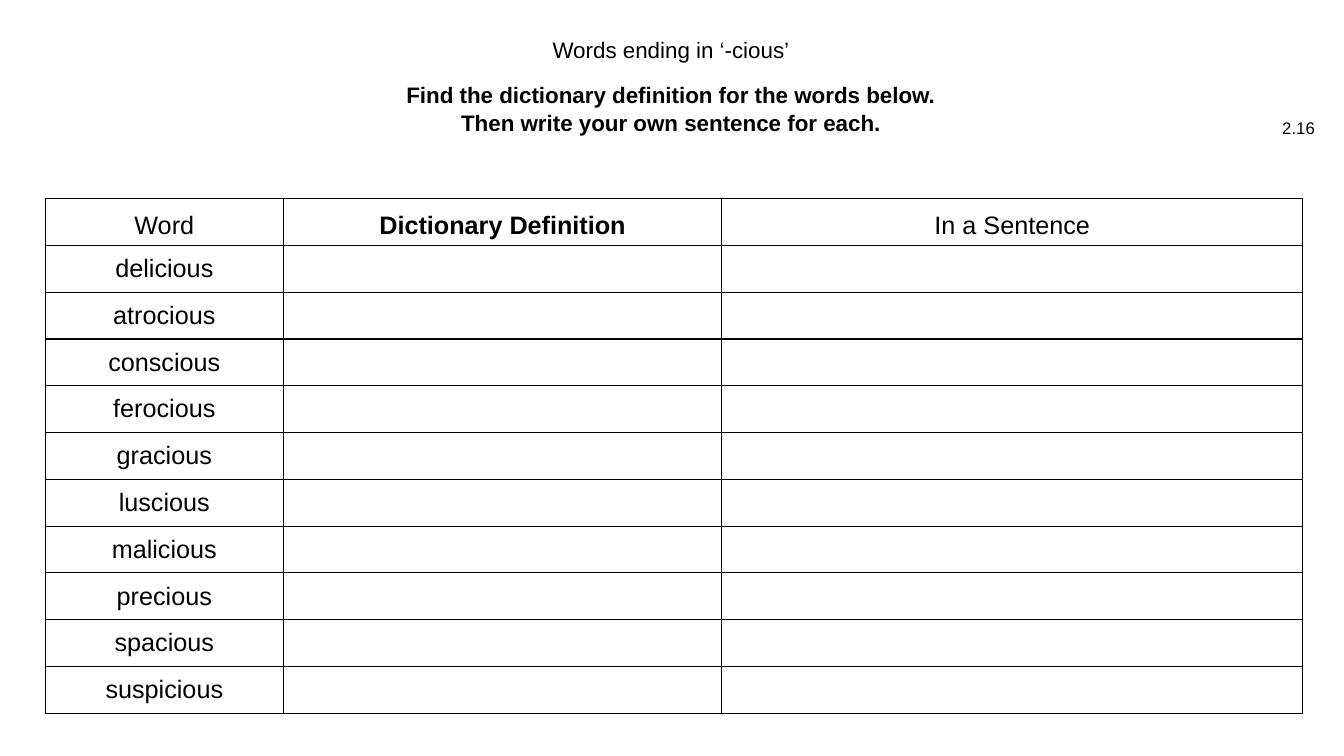
from lxml import etree
from pptx import Presentation
from pptx.dml.color import RGBColor
from pptx.enum.text import MSO_ANCHOR, PP_ALIGN
from pptx.oxml.ns import qn
from pptx.util import Inches, Pt

TOP, MIDDLE, BOTTOM = MSO_ANCHOR.TOP, MSO_ANCHOR.MIDDLE, MSO_ANCHOR.BOTTOM
CENTER, RIGHT = PP_ALIGN.CENTER, PP_ALIGN.RIGHT

HEADINGS = [
    {"lines": ["Find the dictionary definition for the words below.",
               "Then write your own sentence for each."],
     "box": (2.26, 0.77, 8.79, 0.82), "size": "heading", "bold": True,
     "align": CENTER, "anchor": TOP, "inset": 0.03, "spacing": 1.0, "gap": 1},
    {"lines": ["Words ending in ‘-cious’"],
     "box": (3.81, 0.34, 5.69, 0.35), "size": "heading", "bold": False,
     "align": CENTER, "anchor": TOP, "inset": 0.05, "spacing": 0.9, "gap": 0},
    {"lines": ["2.16"],
     "box": (12.51, 1.07, 0.63, 0.4), "size": "reference", "bold": False,
     "align": RIGHT, "anchor": MIDDLE, "inset": 0.05, "spacing": 1.0, "gap": 0},
]
COLUMNS = [("Word", 2.36, False), ("Dictionary Definition", 4.35, True),
           ("In a Sentence", 5.76, False)]
WORDS = ["delicious", "atrocious", "conscious", "ferocious", "gracious",
         "luscious", "malicious", "precious", "spacious", "suspicious"]
TABLE_BOX = (0.45, 1.97, 12.47, 5.11)

THEME = {"font": "Arial", "ink": "000000", "paper": "FFFFFF", "border": 1,
         "heading": 16, "reference": 12, "table": 18}


def apply(target, values):
    for name, value in values.items():
        setattr(target, name, value)


def write(paragraph, text, size, bold, align):
    paragraph.text = text
    paragraph.alignment = align
    apply(paragraph.font, {"name": THEME["font"], "size": Pt(THEME[size]),
                           "bold": bold})
    paragraph.font.color.rgb = RGBColor.from_string(THEME["ink"])


def add_heading(slide, heading):
    frame = slide.shapes.add_textbox(*map(Inches, heading["box"])).text_frame
    apply(frame, {"word_wrap": True, "vertical_anchor": heading["anchor"],
                  "margin_top": Inches(heading["inset"]),
                  "margin_bottom": Inches(heading["inset"])})
    for index, line in enumerate(heading["lines"]):
        paragraph = frame.add_paragraph() if index else frame.paragraphs[0]
        write(paragraph, line, heading["size"], heading["bold"], heading["align"])
        paragraph.line_spacing = heading["spacing"]
        if index:
            paragraph.space_before = Pt(heading["gap"])


def add_borders(cell):
    properties = cell._tc.get_or_add_tcPr()
    for position, side in enumerate(("lnL", "lnR", "lnT", "lnB")):
        line = etree.Element(qn("a:" + side), w=str(Pt(THEME["border"])))
        fill = etree.SubElement(line, qn("a:solidFill"))
        etree.SubElement(fill, qn("a:srgbClr"), val=THEME["ink"])
        properties.insert(position, line)


def add_word_table(slide):
    rows = [[title for title, _, _ in COLUMNS]]
    rows += [[word, "", ""] for word in WORDS]
    table = slide.shapes.add_table(
        len(rows), len(COLUMNS), *map(Inches, TABLE_BOX)).table
    apply(table, {"first_row": False, "horz_banding": False})
    for column, (_, width, _) in zip(table.columns, COLUMNS):
        column.width = Inches(width)
    for row_index, texts in enumerate(rows):
        table.rows[row_index].height = Inches(TABLE_BOX[3] / len(rows))
        for column_index, text in enumerate(texts):
            cell = table.cell(row_index, column_index)
            is_header = row_index == 0
            bold = is_header and COLUMNS[column_index][2]
            write(cell.text_frame.paragraphs[0], text, "table", bold, CENTER)
            apply(cell, {"vertical_anchor": BOTTOM if is_header else MIDDLE,
                         "margin_left": Inches(0.11), "margin_right": Inches(0.11),
                         "margin_top": Inches(0.05), "margin_bottom": Inches(0.05)})
            cell.fill.solid()
            cell.fill.fore_color.rgb = RGBColor.from_string(THEME["paper"])
            add_borders(cell)


def main():
    presentation = Presentation()
    apply(presentation, {"slide_width": Inches(13.33), "slide_height": Inches(7.5)})
    slide = presentation.slides.add_slide(presentation.slide_layouts[6])
    for heading in HEADINGS:
        add_heading(slide, heading)
    add_word_table(slide)
    presentation.save("out.pptx")


if __name__ == "__main__":
    main()
